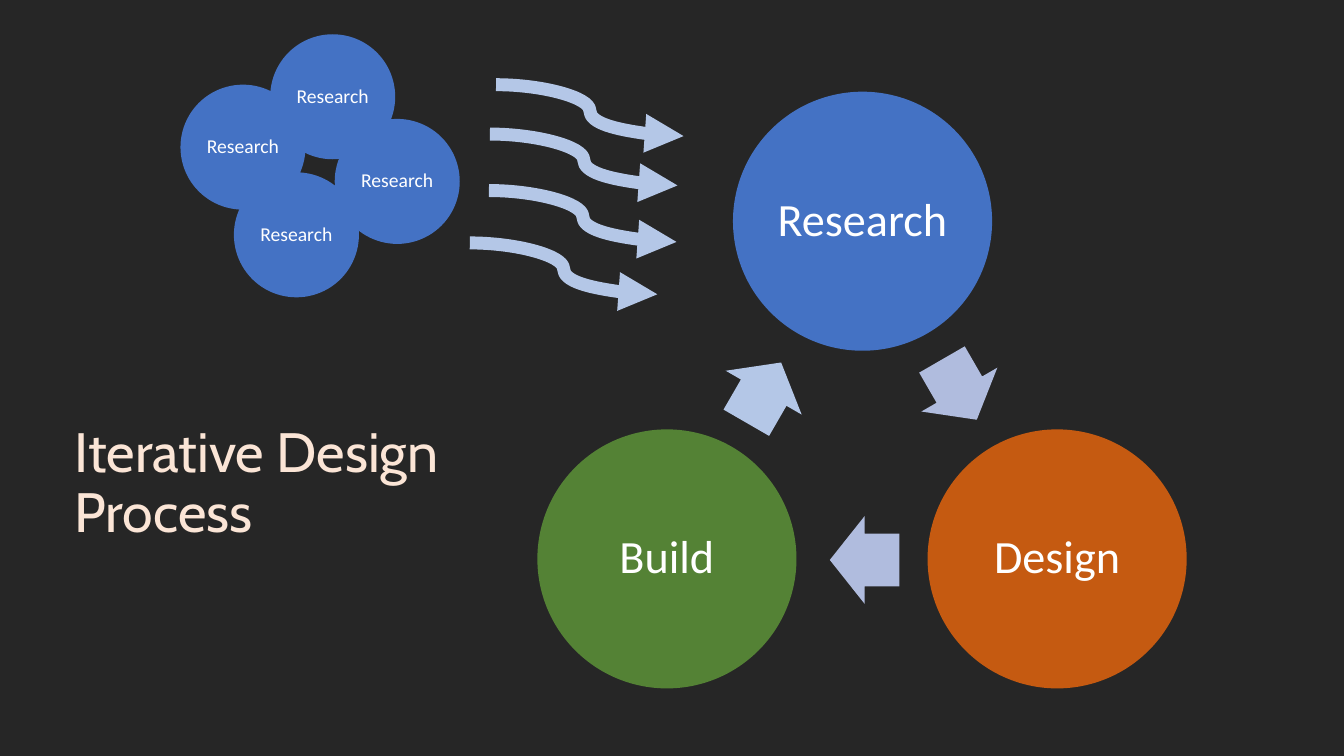
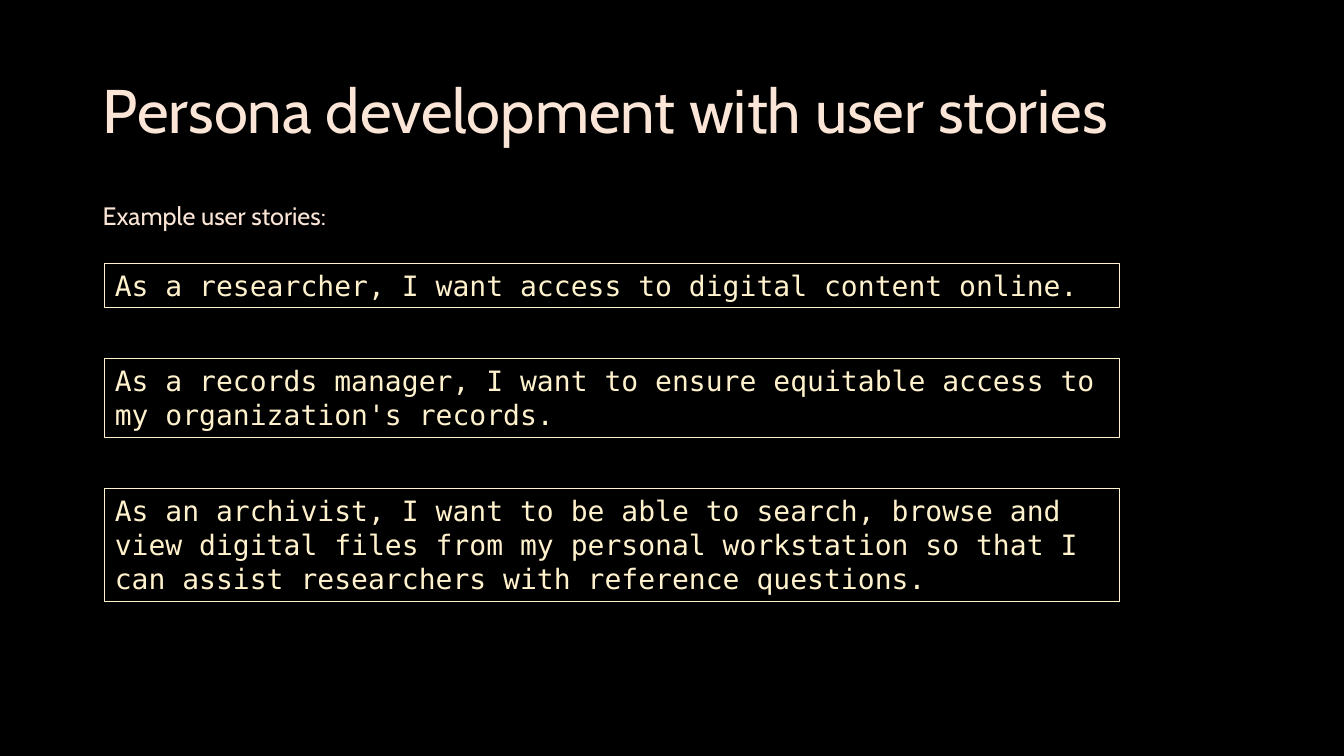
from dataclasses import dataclass

from lxml import etree
from pptx import Presentation
from pptx.dml.color import RGBColor
from pptx.enum.shapes import MSO_CONNECTOR, MSO_SHAPE
from pptx.enum.text import MSO_ANCHOR, MSO_AUTO_SIZE, PP_ALIGN
from pptx.oxml.ns import qn
from pptx.slide import Slide
from pptx.util import Inches, Pt

CIRCLE, BLOCK_ARROW, RECTANGLE = MSO_SHAPE.OVAL, MSO_SHAPE.RIGHT_ARROW, MSO_SHAPE.RECTANGLE
CURVE = MSO_CONNECTOR.CURVE
LEFT, CENTER = PP_ALIGN.LEFT, PP_ALIGN.CENTER
TOP, MIDDLE = MSO_ANCHOR.TOP, MSO_ANCHOR.MIDDLE
FIXED, GROW = MSO_AUTO_SIZE.NONE, MSO_AUTO_SIZE.SHAPE_TO_FIT_TEXT

CHARCOAL = RGBColor(0x26, 0x26, 0x26)
BLACK = RGBColor(0x00, 0x00, 0x00)
WHITE = RGBColor(0xFF, 0xFF, 0xFF)
PEACH = RGBColor(0xFB, 0xE5, 0xD6)
CREAM = RGBColor(0xFF, 0xF2, 0xCC)
BLUE = RGBColor(0x44, 0x72, 0xC4)
ORANGE = RGBColor(0xC5, 0x5A, 0x11)
GREEN = RGBColor(0x54, 0x82, 0x35)
PALE_BLUE = RGBColor(0xB4, 0xC7, 0xE7)
LAVENDER = RGBColor(0xB0, 0xBC, 0xDE)

HEADING_FONT, LABEL_FONT, STORY_FONT = "Cabin", "Calibri", "DejaVu Sans Mono"


@dataclass(frozen=True)
class Bubble:
    text: str
    left: float
    top: float
    size: float
    color: RGBColor
    points: float


@dataclass(frozen=True)
class CycleArrow:
    left: float
    top: float
    rotation: float
    color: RGBColor


@dataclass(frozen=True)
class Story:
    text: str
    lines: int


STAGE_SIZE, TOPIC_SIZE = 2.57, 1.24
STAGES = [
    Bubble("Research", 7.27, 0.91, STAGE_SIZE, BLUE, 33),
    Bubble("Design", 9.2, 4.26, STAGE_SIZE, ORANGE, 33),
    Bubble("Build", 5.33, 4.26, STAGE_SIZE, GREEN, 33),
]
TOPICS = [
    Bubble("Research", left, top, TOPIC_SIZE, BLUE, 14)
    for left, top in [(2.32, 1.71), (1.79, 0.84), (2.68, 0.34), (3.32, 1.18)]
]
CYCLE_ARROWS = [
    CycleArrow(9.17, 3.43, 60, LAVENDER),
    CycleArrow(8.23, 5.12, 180, LAVENDER),
    CycleArrow(7.23, 3.46, 300, PALE_BLUE),
]
FLOW_STARTS = [(4.92, 0.84), (4.86, 1.33), (4.85, 1.89), (4.66, 2.41)]
FLOW_WIDTH, FLOW_DROP = 1.86, 0.51

STORIES = [
    Story("As a researcher, I want access to digital content online.", 1),
    Story("As a records manager, I want to ensure equitable access to "
          "my organization's records.", 2),
    Story("As an archivist, I want to be able to search, browse and view digital "
          "files from my personal workstation so that I can assist researchers "
          "with reference questions.", 3),
]
STORY_LEFT, STORY_TOP, STORY_WIDTH = 1.04, 2.61, 10.06
STORY_LINE, STORY_PADDING, STORY_GAP = 0.34, 0.1, 0.51


def write_text(shape, text: str, *, font: str, size: float, color: RGBColor,
               align=LEFT, anchor=TOP, spacing: float = 1.0, inset: float | None = None,
               wrap: bool = True, fit=FIXED) -> None:
    """Fill a shape's text frame with one formatted paragraph."""
    frame = shape.text_frame
    frame.word_wrap, frame.auto_size, frame.vertical_anchor = wrap, fit, anchor
    if inset is not None:
        frame.margin_left = frame.margin_right = Inches(inset)
        frame.margin_top = frame.margin_bottom = Inches(inset)
    paragraph = frame.paragraphs[0]
    paragraph.alignment, paragraph.line_spacing = align, spacing
    run = paragraph.add_run()
    run.text = text
    run.font.name, run.font.size, run.font.color.rgb = font, Pt(size), color


def add_titled_slide(deck, background: RGBColor, title: str, size: float,
                     left: float, top: float, width: float, height: float) -> Slide:
    slide = deck.slides.add_slide(deck.slide_layouts[5])
    slide.background.fill.solid()
    slide.background.fill.fore_color.rgb = background
    heading = slide.shapes.title
    heading.left, heading.top = Inches(left), Inches(top)
    heading.width, heading.height = Inches(width), Inches(height)
    write_text(heading, title, font=HEADING_FONT, size=size, color=PEACH,
               anchor=MIDDLE, spacing=0.9)
    return slide


def add_block(slide: Slide, kind, left: float, top: float, width: float, height: float,
              *, fill: RGBColor | None = None, outline: RGBColor | None = None):
    block = slide.shapes.add_shape(kind, Inches(left), Inches(top),
                                   Inches(width), Inches(height))
    block.shadow.inherit = False
    if fill is None:
        block.fill.background()
    else:
        block.fill.solid()
        block.fill.fore_color.rgb = fill
    if outline is None:
        block.line.fill.background()
    else:
        block.line.color.rgb, block.line.width = outline, Pt(0.75)
    return block


def add_bubble(slide: Slide, bubble: Bubble) -> None:
    circle = add_block(slide, CIRCLE, bubble.left, bubble.top, bubble.size, bubble.size,
                       fill=bubble.color)
    write_text(circle, bubble.text, font=LABEL_FONT, size=bubble.points, color=WHITE,
               align=CENTER, anchor=MIDDLE, spacing=0.9, inset=0.05)


def add_cycle_arrow(slide: Slide, arrow: CycleArrow) -> None:
    pointer = add_block(slide, BLOCK_ARROW, arrow.left, arrow.top, 0.69, 0.87,
                        fill=arrow.color)
    pointer.adjustments[0], pointer.adjustments[1] = 0.6, 0.5
    pointer.rotation = arrow.rotation


def add_flow_arrow(slide: Slide, left: float, top: float) -> None:
    flow = slide.shapes.add_connector(CURVE, Inches(left), Inches(top),
                                      Inches(left + FLOW_WIDTH), Inches(top + FLOW_DROP))
    flow.line.color.rgb, flow.line.width = PALE_BLUE, Pt(9.25)
    etree.SubElement(flow.line._get_or_add_ln(), qn("a:tailEnd"), type="triangle")
    etree.SubElement(flow._element.spPr, qn("a:effectLst"))


def build_process_slide(deck) -> None:
    slide = add_titled_slide(deck, CHARCOAL, "Iterative Design Process", 39.6,
                             0.64, 4.21, 4.22, 1.2)
    # Design cycle and the research topics that feed it
    for bubble in STAGES + TOPICS:
        add_bubble(slide, bubble)
    for arrow in CYCLE_ARROWS:
        add_cycle_arrow(slide, arrow)
    for left, top in FLOW_STARTS:
        add_flow_arrow(slide, left, top)


def build_stories_slide(deck) -> None:
    slide = add_titled_slide(deck, BLACK, "Persona development with user stories", 44,
                             0.92, 0.4, 11.5, 1.45)
    intro = slide.shapes.add_textbox(Inches(0.92), Inches(1.94), Inches(2.63), Inches(0.4))
    write_text(intro, "Example user stories:", font=HEADING_FONT, size=18, color=PEACH,
               wrap=False, fit=GROW)
    # Outlined stories, each as tall as its lines
    top = STORY_TOP
    for story in STORIES:
        height = STORY_PADDING + story.lines * STORY_LINE
        box = add_block(slide, RECTANGLE, STORY_LEFT, top, STORY_WIDTH, height,
                        outline=CREAM)
        write_text(box, story.text, font=STORY_FONT, size=20, color=CREAM, fit=GROW)
        top += height + STORY_GAP


def main() -> None:
    deck = Presentation()
    deck.slide_width, deck.slide_height = Inches(13.33), Inches(7.5)
    build_process_slide(deck)
    build_stories_slide(deck)
    deck.save("out.pptx")


if __name__ == "__main__":
    main()
